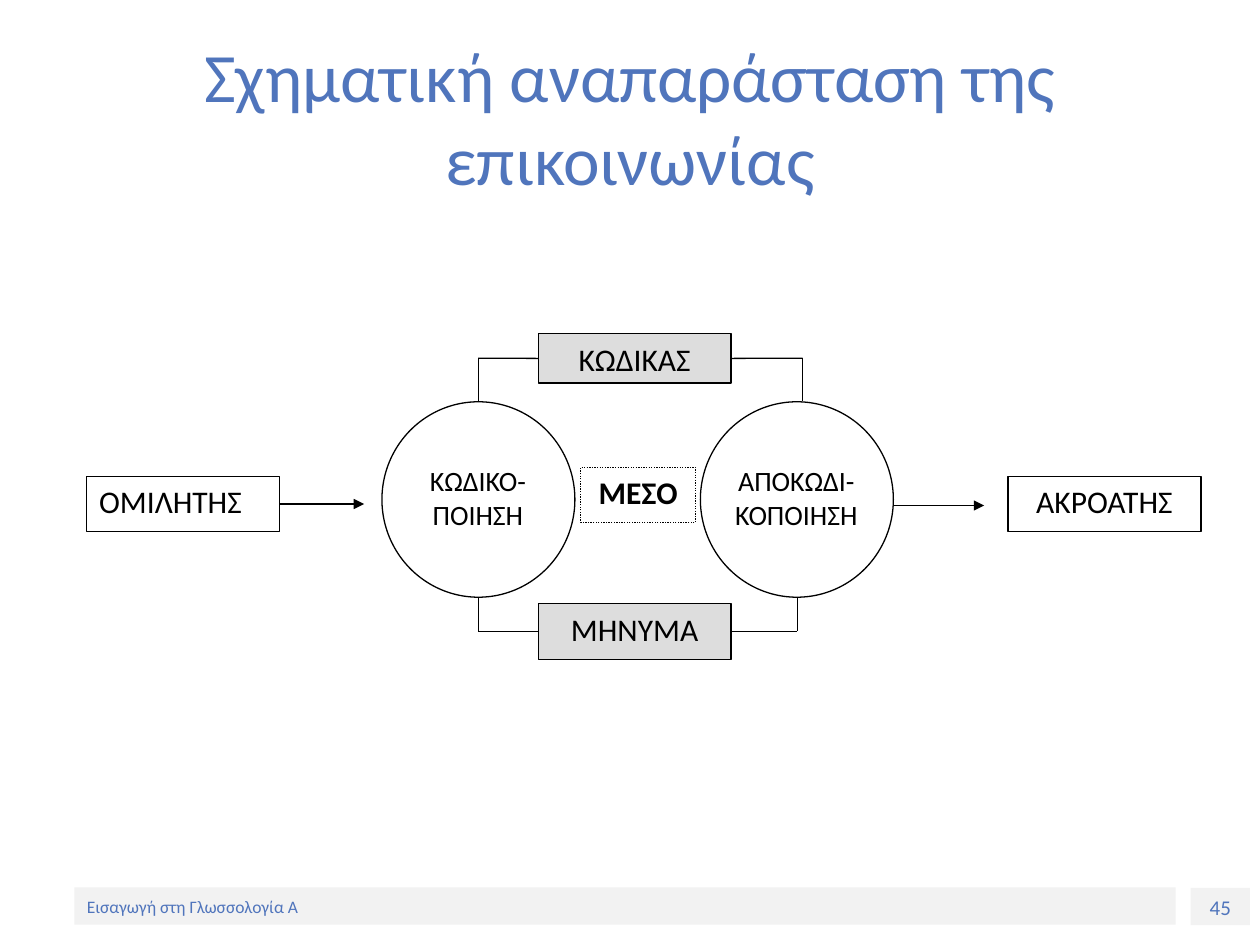
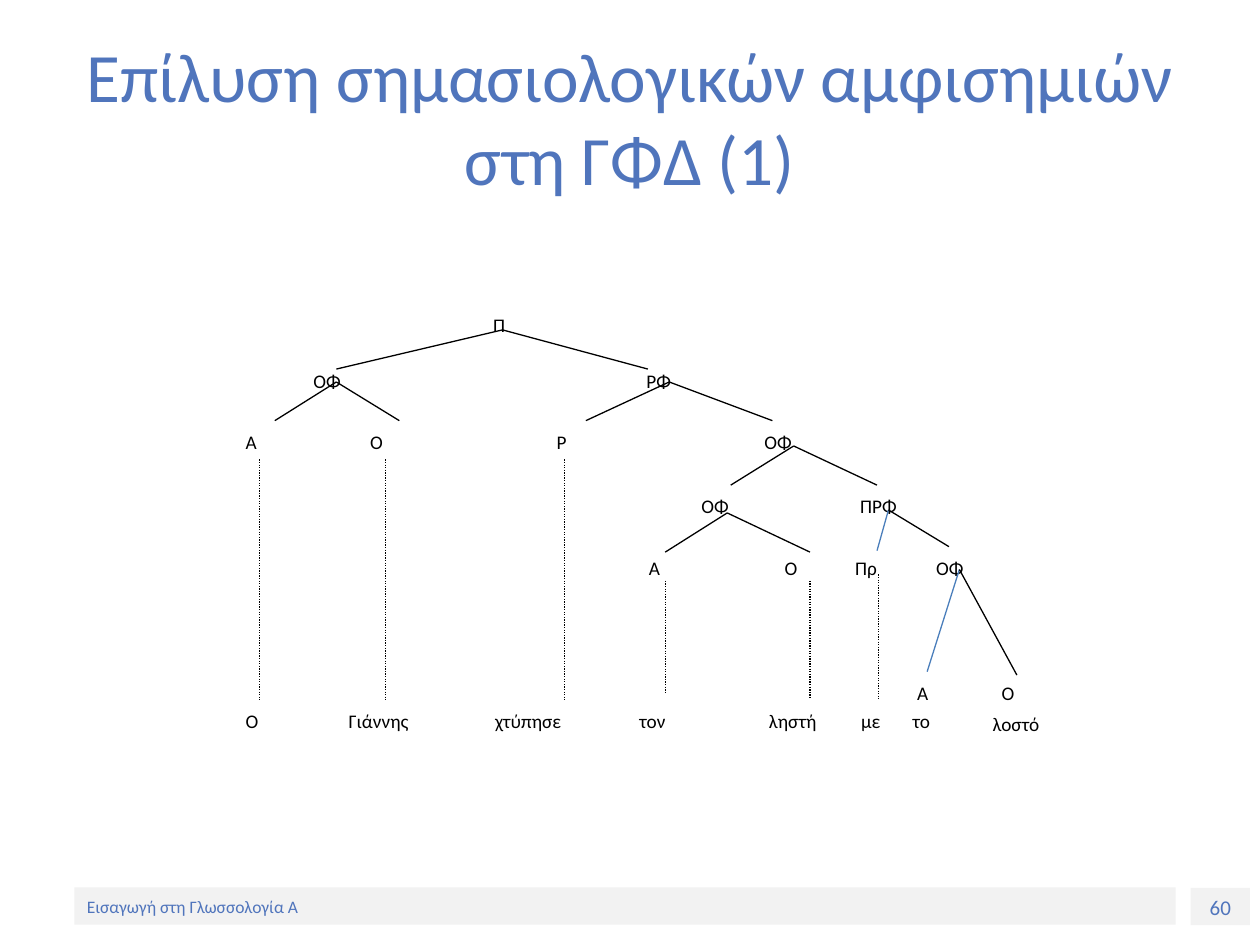
from lxml.etree import SubElement
from pptx import Presentation
from pptx.dml.color import RGBColor
from pptx.enum.dml import MSO_LINE_DASH_STYLE as Dash
from pptx.enum.shapes import MSO_AUTO_SHAPE_TYPE as Preset, MSO_CONNECTOR as Connector
from pptx.enum.text import MSO_ANCHOR as Anchor, PP_ALIGN as Align
from pptx.oxml.ns import qn
from pptx.util import Cm, Pt

COLOURS = {
    "title": "5075BC",
    "band": "F2F2F2",
    "ink": "000000",
    "paper": "FFFFFF",
    "grey": "DDDDDD",
    "blue": "4A7EBB",
}
FONT = "Calibri"
COURSE = "Εισαγωγή στη Γλωσσολογία Α"
TOP, LEFT, BOTTOM, RIGHT = range(4)


def colour(name):
    return RGBColor.from_string(COLOURS[name])


def assign(target, values):
    for name, value in values.items():
        setattr(target, name, value)


class Deck:
    def __init__(self):
        self.presentation = Presentation()
        assign(self.presentation, {"slide_width": Cm(25.4), "slide_height": Cm(19.05)})
        self.slide = None

    def start_slide(self, title, number):
        self.slide = self.presentation.slides.add_slide(self.presentation.slide_layouts[6])
        band = {"fill": "band", "line": None, "ink": "title", "after": 0}
        self.box(number, 24, 17.9, 1.2, 0.75, size=12, **band)
        self.box(COURSE, 1.5, 17.89, 22.2, 0.75, size=10, align=Align.LEFT,
                 anchor=Anchor.MIDDLE, **band)
        self.label(title, 1.27, 0.76, 22.86, 3.18, size=39.6, ink="title",
                   align=Align.CENTER, anchor=Anchor.MIDDLE)

    def fill_text(self, shape, text, size, ink="ink", bold=False, align=Align.LEFT,
                  anchor=Anchor.TOP, after=0, spacing=1.0):
        frame = shape.text_frame
        assign(frame, {"word_wrap": True, "vertical_anchor": anchor})
        paragraph = frame.paragraphs[0]
        paragraph.text = text
        assign(paragraph, {"alignment": align, "space_after": Pt(after),
                           "line_spacing": spacing})
        assign(paragraph.font, {"name": FONT, "size": Pt(size), "bold": bold})
        paragraph.font.color.rgb = colour(ink)

    def label(self, text, left, top, width, height, **style):
        shape = self.slide.shapes.add_textbox(Cm(left), Cm(top), Cm(width), Cm(height))
        self.fill_text(shape, text, **style)

    def box(self, text, left, top, width, height, preset=Preset.RECTANGLE, fill="paper",
            line="ink", dash=None, size=18, align=Align.CENTER, after=10, **style):
        shape = self.slide.shapes.add_shape(preset, Cm(left), Cm(top), Cm(width), Cm(height))
        shape.shadow.inherit = False
        shape.fill.solid()
        shape.fill.fore_color.rgb = colour(fill)
        if line:
            self.stroke(shape.line, line, dash)
        else:
            shape.line.fill.background()
        if text:
            self.fill_text(shape, text, size, align=align, after=after, **style)
        return shape

    def stroke(self, line, ink, dash):
        line.color.rgb = colour(ink)
        assign(line, {"width": Pt(0.75), "dash_style": dash})

    def connect(self, start, end, ink="ink", dash=None, arrow=False, origin=None, target=None):
        connector = self.slide.shapes.add_connector(
            Connector.STRAIGHT, *(Cm(value) for value in (*start, *end)))
        self.stroke(connector.line, ink, dash)
        properties = connector._element.spPr
        if arrow:
            SubElement(properties.find(qn("a:ln")), qn("a:tailEnd"), type="triangle")
        SubElement(properties, qn("a:effectLst"))
        if origin:
            connector.begin_connect(*origin)
        if target:
            connector.end_connect(*target)


def build_communication(deck):
    deck.start_slide("Σχηματική αναπαράσταση της επικοινωνίας", "45")
    width, height = 3.89, 1.12
    speaker = deck.box("ΟΜΙΛΗΤΗΣ", 1.75, 9.6, width, height, align=Align.LEFT)
    deck.connect((5.64, 10.16), (7.34, 10.16), arrow=True, origin=(speaker, RIGHT))

    for process, left in (("ΚΩΔΙΚΟ-ΠΟΙΗΣΗ", 7.7), ("ΑΠΟΚΩΔΙ-ΚΟΠΟΙΗΣΗ", 14.12)):
        deck.box("", left, 8.1, width, 3.94, preset=Preset.OVAL)
        deck.box(process, left + 0.36, 9.22, 3.15, 1.85, line=None, size=16)

    message = deck.box("ΜΗΝΥΜΑ", 10.85, 12.17, width, height, fill="grey")
    code = deck.box("ΚΩΔΙΚΑΣ", 10.85, 6.73, width, 0.99, fill="grey")
    for box, middle, circle_edge, right_x in ((message, 12.73, 12.06, 16.07),
                                              (code, 7.22, 8.08, 16.18)):
        for side, x, box_x in ((LEFT, 9.64, 10.85), (RIGHT, right_x, 14.74)):
            deck.connect((x, circle_edge), (x, middle))
            deck.connect((x, middle), (box_x, middle), target=(box, side))

    deck.box("ΑΚΡΟΑΤΗΣ", 20.32, 9.6, width, height)
    deck.connect((18.01, 10.19), (19.84, 10.19), arrow=True)
    deck.box("ΜΕΣΟ", 11.71, 9.42, 2.31, height, dash=Dash.ROUND_DOT, bold=True)


def build_syntax_tree(deck):
    deck.start_slide("Επίλυση σημασιολογικών αμφισημιών στη ΓΦΔ (1)", "60")
    levels = (
        (6.12, (("Π", 9.69),)),
        (7.25, (("ΟΦ", 6.07), ("ΡΦ", 12.78))),
        (8.48, (("Α", 4.7), ("Ο", 7.21), ("Ρ", 10.97), ("ΟΦ", 15.16))),
        (9.78, (("ΟΦ", 13.89), ("ΠΡΦ", 17.09))),
        (11.02, (("Α", 12.83), ("Ο", 15.57), ("Πρ", 16.99), ("ΟΦ", 18.62))),
        (13.55, (("Α", 18.24), ("Ο", 19.94))),
        (14.1, (("Ο", 4.7), ("Γιάννης", 6.78), ("χτύπησε", 9.73), ("τον", 12.64),
                ("ληστή", 15.25), ("με", 17.11), ("το", 18.15))),
        (14.17, (("λοστό", 19.76),)),
    )
    for top, nodes in levels:
        for node, left in nodes:
            deck.label(node, left, top, 2.1, 0.79, size=11, after=10, spacing=1.15)

    branches = (
        ((10.13, 6.65), (6.78, 7.44), (13.06, 7.44), "ink"),
        ((6.78, 7.7), (5.54, 8.48), (8.05, 8.48), "ink"),
        ((13.49, 7.7), (11.81, 8.48), (15.57, 8.48), "ink"),
        ((16, 8.99), (14.73, 9.78), (17.68, 9.78), "ink"),
        ((14.66, 10.34), (13.41, 11.13), (16.33, 11.13), "ink"),
        ((17.91, 10.28), (17.68, 11.1), (19.13, 11.02), "blue"),
        ((19.34, 11.48), (18.69, 13.54), (20.5, 13.61), "blue"),
    )
    for apex, left_child, right_child, left_ink in branches:
        deck.connect(apex, left_child, ink=left_ink)
        deck.connect(apex, right_child)

    word_lines = ((5.23, 9.26, 14.1), (7.77, 9.26, 14.1), (11.38, 9.26, 14.1),
                  (13.41, 11.71, 13.97), (16.33, 11.71, 14.07), (17.71, 11.58, 14.1))
    for x, top, bottom in word_lines:
        deck.connect((x, top), (x, bottom), dash=Dash.ROUND_DOT)


def main():
    deck = Deck()
    build_communication(deck)
    build_syntax_tree(deck)
    deck.presentation.save("out.pptx")


if __name__ == "__main__":
    main()
